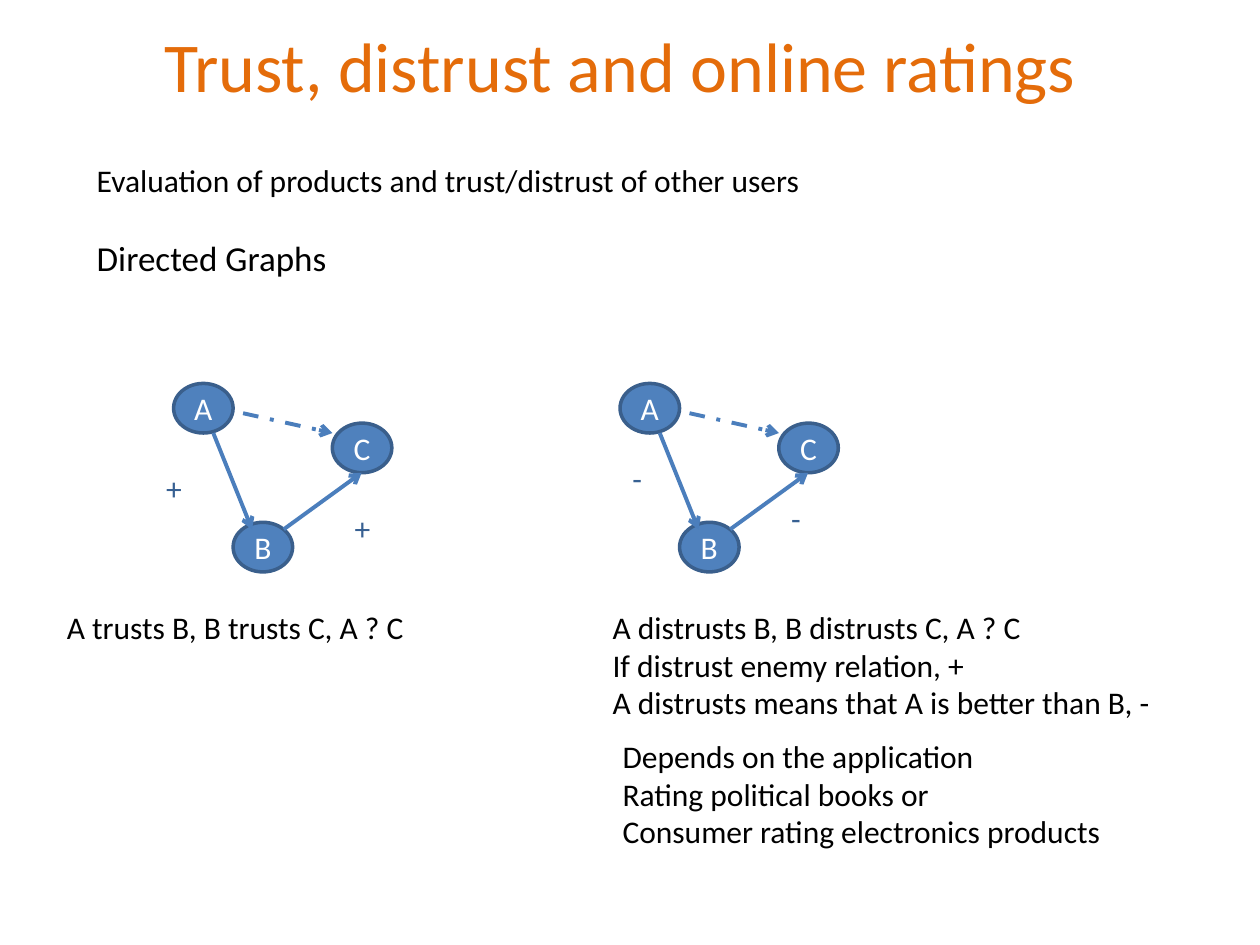
from dataclasses import dataclass

from lxml import etree
from pptx import Presentation
from pptx import util as u
from pptx.dml.color import RGBColor
from pptx.enum import dml, shapes, text
from pptx.oxml import ns


@dataclass(frozen=True)
class Theme:
    font: str = "Calibri"
    title: str = "E46C0A"
    body: str = "000000"
    sign: str = "376092"
    node: str = "4F81BD"
    node_line: str = "3A5F8C"
    node_text: str = "FFFFFF"
    arrow: str = "4B7EBC"
    title_size: float = 40
    heading_size: float = 20
    body_size: float = 18
    node_width: float = 2
    arrow_width: float = 2.25


THEME = Theme()
NODE_SIZE = (1.2, 1)
NODES = {"A": (0, 0), "C": (3.2, 0.8), "B": (1.2, 2.8)}
ARROWS = [
    ((0.8, 1), (1.58, 2.94), False),
    ((2.22, 2.94), (3.79, 1.8), False),
    ((1.4, 0.6), (3.2, 1), True),
]


def rgb(color):
    return RGBColor.from_string(color)


def write(p, content, size=THEME.body_size, color=THEME.body, align=None, before=0):
    p.alignment = align
    p.space_before = u.Pt(before)
    r = p.add_run()
    r.text = content
    r.font.name = THEME.font
    r.font.size = u.Pt(size)
    r.font.color.rgb = rgb(color)


def add_text(s, lines, x, y, w, h, **fmt):
    tf = s.shapes.add_textbox(u.Cm(x), u.Cm(y), u.Cm(w), u.Cm(h)).text_frame
    tf.word_wrap = True
    for i, line in enumerate(lines):
        write(tf.add_paragraph() if i else tf.paragraphs[0], line, **fmt)
    return tf


def add_node(s, name, x, y):
    w, h = NODE_SIZE
    sp = s.shapes.add_shape(
        shapes.MSO_SHAPE.OVAL, u.Cm(x), u.Cm(y), u.Cm(w), u.Cm(h))
    sp.shadow.inherit = False
    sp.fill.solid()
    sp.fill.fore_color.rgb = rgb(THEME.node)
    sp.line.color.rgb = rgb(THEME.node_line)
    sp.line.width = u.Pt(THEME.node_width)
    tf = sp.text_frame
    tf.margin_left = tf.margin_right = tf.margin_top = tf.margin_bottom = 0
    tf.vertical_anchor = text.MSO_ANCHOR.MIDDLE
    write(tf.paragraphs[0], name, color=THEME.node_text,
          align=text.PP_ALIGN.CENTER)


def add_arrow(s, x1, y1, x2, y2, dashed):
    c = s.shapes.add_connector(
        shapes.MSO_CONNECTOR.STRAIGHT, u.Cm(x1), u.Cm(y1), u.Cm(x2), u.Cm(y2))
    c.line.color.rgb = rgb(THEME.arrow)
    c.line.width = u.Pt(THEME.arrow_width)
    if dashed:
        c.line.dash_style = dml.MSO_LINE.DASH_DOT
    etree.SubElement(c.line._get_or_add_ln(), ns.qn("a:tailEnd"), type="arrow")
    etree.SubElement(c._element.spPr, ns.qn("a:effectLst"))


def add_graph(s, x, y, sign, sign_spots):
    for name, (dx, dy) in NODES.items():
        add_node(s, name, x + dx, y + dy)
    for (x1, y1), (x2, y2), dashed in ARROWS:
        add_arrow(s, x + x1, y + y1, x + x2, y + y2, dashed)
    for dx, dy in sign_spots:
        add_text(s, [sign], x + dx, y + dy, 0.8, 1.03, color=THEME.sign)


def main():
    prs = Presentation()
    prs.slide_width, prs.slide_height = u.Cm(25.4), u.Cm(19.05)
    s = prs.slides.add_slide(prs.slide_layouts[6])

    add_text(s, ["Trust, distrust and online ratings"], 1.5, 0.33, 22, 1.96,
             size=THEME.title_size, color=THEME.title,
             align=text.PP_ALIGN.CENTER)
    tf = add_text(s, ["Evaluation of products and trust/distrust of other users"],
                  1.7, 3.12, 16.8, 2.64)
    write(tf.add_paragraph(), "Directed Graphs", size=THEME.heading_size, before=21.5)

    add_graph(s, 3.5, 7.73, "+", [(-0.4, 1.6), (3.4, 2.4)])
    add_graph(s, 12.5, 7.73, "-", [(0, 1.4), (3.2, 2.2)])

    add_text(s, ["A trusts B, B trusts C, A ? C"], 1.1, 12.13, 8.6, 1.03)
    add_text(s, ["A distrusts B, B distrusts C, A ? C",
                 "If distrust enemy relation, +",
                 "A distrusts means that A is better than B, -"],
             12.1, 12.13, 11.6, 2.57)
    add_text(s, ["Depends on the application",
                 "Rating political books or",
                 "Consumer rating electronics products"],
             12.3, 14.73, 12.4, 2.57)
    prs.save("out.pptx")


if __name__ == "__main__":
    main()
